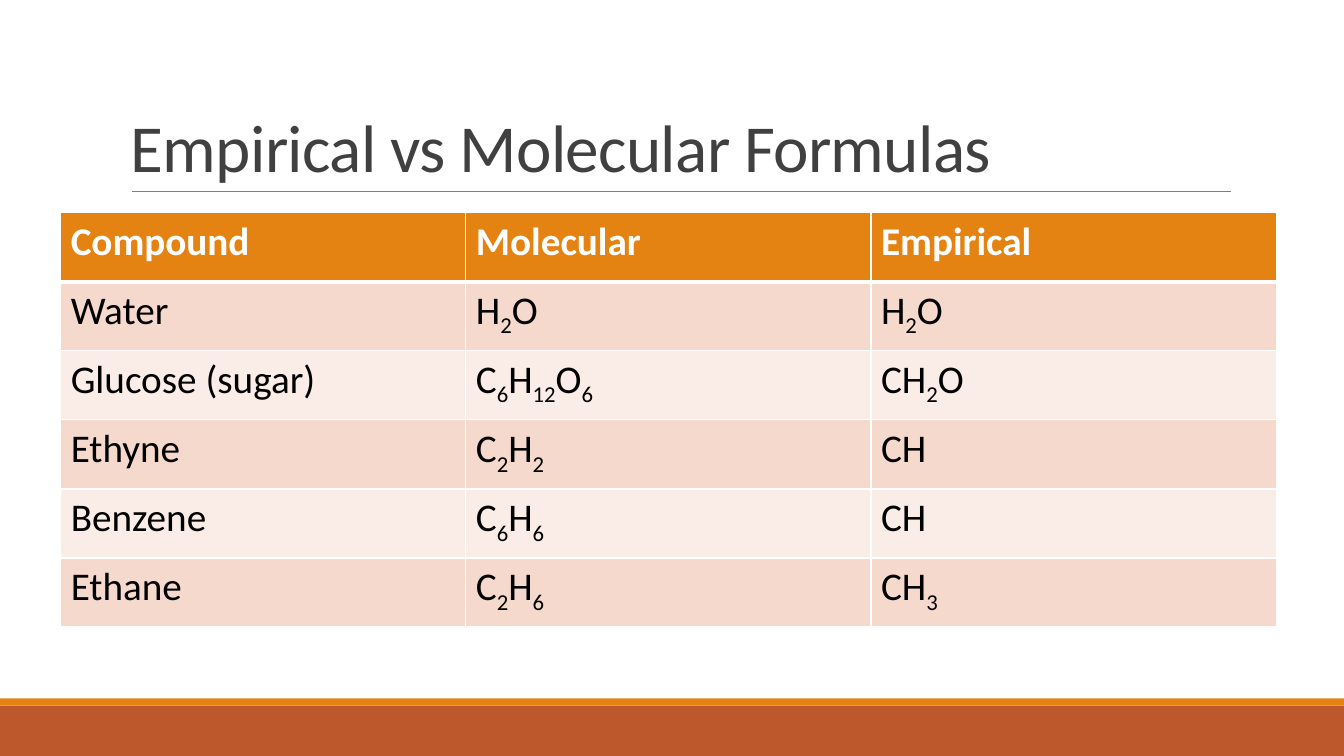
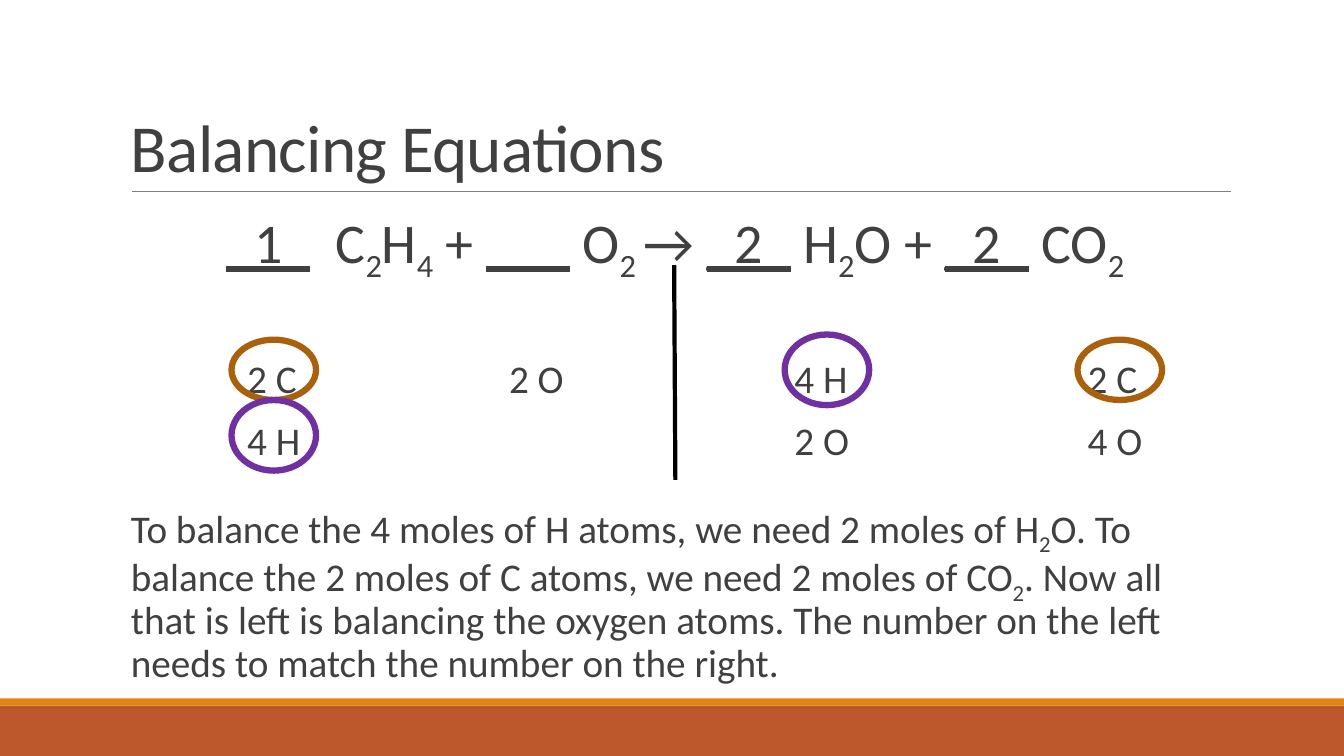
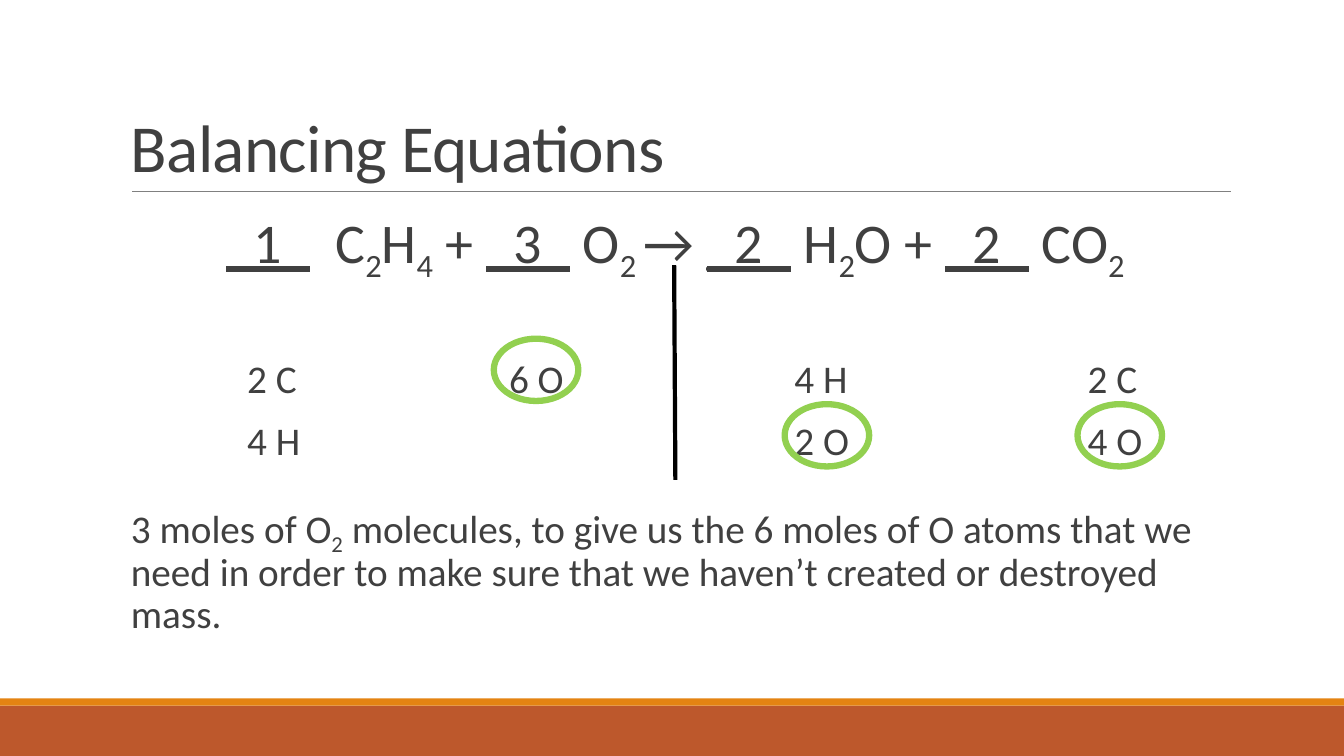
from lxml.etree import SubElement
from pptx import Presentation
from pptx.dml.color import RGBColor
from pptx.enum.shapes import MSO_CONNECTOR as Connector, MSO_SHAPE as Shape
from pptx.enum.text import MSO_ANCHOR as Anchor, PP_ALIGN as Align
from pptx.oxml.ns import qn
from pptx.util import Cm, Pt

FONT = "Calibri"
WHITE, BLACK, INK, GREY = "FFFFFF", "000000", "404040", "808080"
ORANGE, RUST, BROWN, PURPLE, GREEN = "E48312", "BD582C", "A9610D", "7030A0", "92D050"
ROW_TINTS = ("F5D9CC", "FAEDE7")


def color(value):
    return RGBColor.from_string(value)


class Lesson:
    width, height = 33.87, 19.05
    left, content_width = 3.05, 27.94
    count_tabs = (3.18, 9.78, 16.97, 24.36)
    ring_centers_x = (6.9, 13.51, 20.84, 28.22)
    ring_centers_y = (9.32, 10.97)

    def __init__(self):
        self.deck = Presentation()
        self.deck.slide_width, self.deck.slide_height = Cm(self.width), Cm(self.height)
        self.page = None

    def start(self, title):
        self.page = self.deck.slides.add_slide(self.deck.slide_layouts[6])
        self.band(17.78, 1.27, RUST)
        self.band(17.6, 0.18, ORANGE)
        self.line(3.33, 4.83, 31.01, 4.83, GREY, 0.5)
        frame = self.text_frame(0.79, 4.04)
        frame.vertical_anchor = Anchor.BOTTOM
        para = frame.paragraphs[0]
        para.line_spacing = 0.85
        self.add_spans(para, title, 48, INK, spacing=-50)

    def band(self, top, height, fill):
        band = self.page.shapes.add_shape(Shape.RECTANGLE, 0, Cm(top), Cm(self.width), Cm(height))
        band.shadow.inherit = False
        band.fill.solid()
        band.fill.fore_color.rgb = color(fill)
        band.line.fill.background()

    def line(self, x1, y1, x2, y2, ink, weight):
        line = self.page.shapes.add_connector(Connector.STRAIGHT, Cm(x1), Cm(y1), Cm(x2), Cm(y2))
        line.line.color.rgb = color(ink)
        line.line.width = Pt(weight)
        SubElement(line._element.spPr, qn("a:effectLst"))

    def text_frame(self, top, height):
        box = self.page.shapes.add_textbox(Cm(self.left), Cm(top), Cm(self.content_width), Cm(height))
        box.text_frame.word_wrap = True
        return box.text_frame

    def add_spans(self, para, text, size, ink, bold=False, spacing=None):
        for index, piece in enumerate(text.replace("}", "{").split("{")):
            if not piece:
                continue
            span = para.add_run()
            span.text = piece
            span.font.name, span.font.size, span.font.bold = FONT, Pt(size), bold
            span.font.color.rgb = color(ink)
            properties = span._r.get_or_add_rPr()
            if spacing:
                properties.set("spc", str(spacing))
            if index % 2 and piece.startswith("_"):
                span.font.underline = True
            elif index % 2:
                properties.set("baseline", "-25000")

    def body(self, equation, counts, explanation):
        frame = self.text_frame(5.13, 12.37)
        frame.margin_left = frame.margin_right = 0
        para = self.body_para(frame.paragraphs[0], equation, 40, 12)
        para.alignment = Align.CENTER
        for row, before in zip(counts, (56.7, 12)):
            text = "".join("\t" + count for count in row)
            para = self.body_para(frame.add_paragraph(), text, 28, before)
            tabs = SubElement(para._p.get_or_add_pPr(), qn("a:tabLst"))
            for position in self.count_tabs:
                SubElement(tabs, qn("a:tab"), pos=str(Cm(position)), algn="l")
        para = self.body_para(frame.add_paragraph(), explanation, 28, 27.1)
        para._p.get_or_add_pPr().set("marL", str(Cm(0.25)))

    def body_para(self, para, text, size, before):
        para.line_spacing = 0.9
        para.space_before, para.space_after = Pt(before), Pt(2)
        self.add_spans(para, text, size, INK)
        return para

    def ring(self, column, row, height, ink):
        width = 2.13
        ring = self.page.shapes.add_shape(
            Shape.OVAL, Cm(self.ring_centers_x[column] - width / 2),
            Cm(self.ring_centers_y[row] - height / 2), Cm(width), Cm(height))
        ring.shadow.inherit = False
        ring.fill.background()
        ring.line.color.rgb = color(ink)
        ring.line.width = Pt(4.5)

    def divider(self):
        self.line(17.02, 12.09, 16.99, 6.68, BLACK, 3)

    def table(self, rows):
        columns, row_height = len(rows[0]), 1.74
        table = self.page.shapes.add_table(
            len(rows), columns, Cm(1.53), Cm(5.36), Cm(30.63), Cm(row_height * len(rows))).table
        for index, row in enumerate(rows):
            table.rows[index].height = Cm(row_height)
            header = index == 0
            fill = ORANGE if header else ROW_TINTS[(index - 1) % 2]
            for column, text in enumerate(row):
                cell = table.cell(index, column)
                self.borders(cell, 3 if index == 1 else 1, 3 if header else 1)
                cell.fill.solid()
                cell.fill.fore_color.rgb = color(fill)
                self.add_spans(cell.text_frame.paragraphs[0], text, 28, WHITE if header else BLACK, header)

    def borders(self, cell, top, bottom):
        properties = cell._tc.get_or_add_tcPr()
        for side, weight in (("L", 1), ("R", 1), ("T", top), ("B", bottom)):
            border = SubElement(properties, qn("a:ln" + side), w=str(Pt(weight)))
            SubElement(SubElement(border, qn("a:solidFill")), qn("a:srgbClr"), val=WHITE)


def main():
    lesson = Lesson()

    lesson.start("Empirical vs Molecular Formulas")
    lesson.table([
        ("Compound", "Molecular", "Empirical"),
        ("Water", "H{2}O", "H{2}O"),
        ("Glucose (sugar)", "C{6}H{12}O{6}", "CH{2}O"),
        ("Ethyne", "C{2}H{2}", "CH"),
        ("Benzene", "C{6}H{6}", "CH"),
        ("Ethane", "C{2}H{6}", "CH{3}"),
    ])

    steps = [
        ("___", "2 O",
         "To balance the 4 moles of H atoms, we need 2 moles of H{2}O. To balance the 2 moles of C "
         "atoms, we need 2 moles of CO{2}. Now all that is left is balancing the oxygen atoms. "
         "The number on the left needs to match the number on the right.",
         [(0, 0, 1.52, BROWN), (3, 0, 1.52, BROWN), (0, 1, 1.78, PURPLE), (2, 0, 1.78, PURPLE)]),
        ("_3_", "6 O",
         "3 moles of O{2} molecules, to give us the 6 moles of O atoms that we need in order to "
         "make sure that we haven’t created or destroyed mass.",
         [(2, 1, 1.57, GREEN), (3, 1, 1.57, GREEN), (1, 0, 1.57, GREEN)]),
    ]
    for blank, oxygen, explanation, rings in steps:
        lesson.start("Balancing Equations")
        lesson.body(
            "{_1_}  C{2}H{4} + {" + blank + "} O{2 }→ {_2_} H{2}O + {_2_} CO{2}",
            [("2 C", oxygen, "4 H", "2 C"), ("4 H", "", "2 O", "4 O")],
            explanation)
        for ring in rings:
            lesson.ring(*ring)
        lesson.divider()

    lesson.deck.save("out.pptx")


if __name__ == "__main__":
    main()
